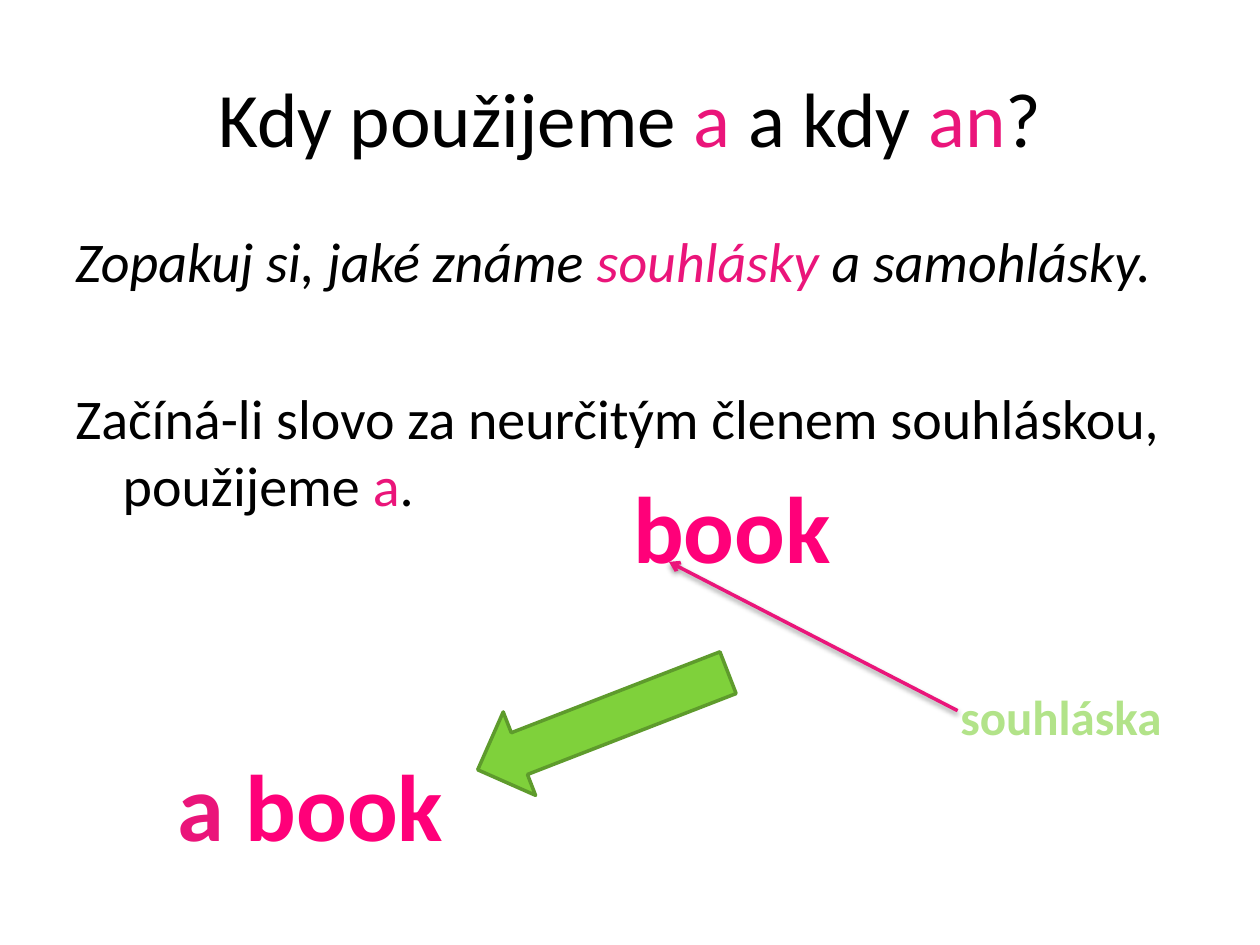
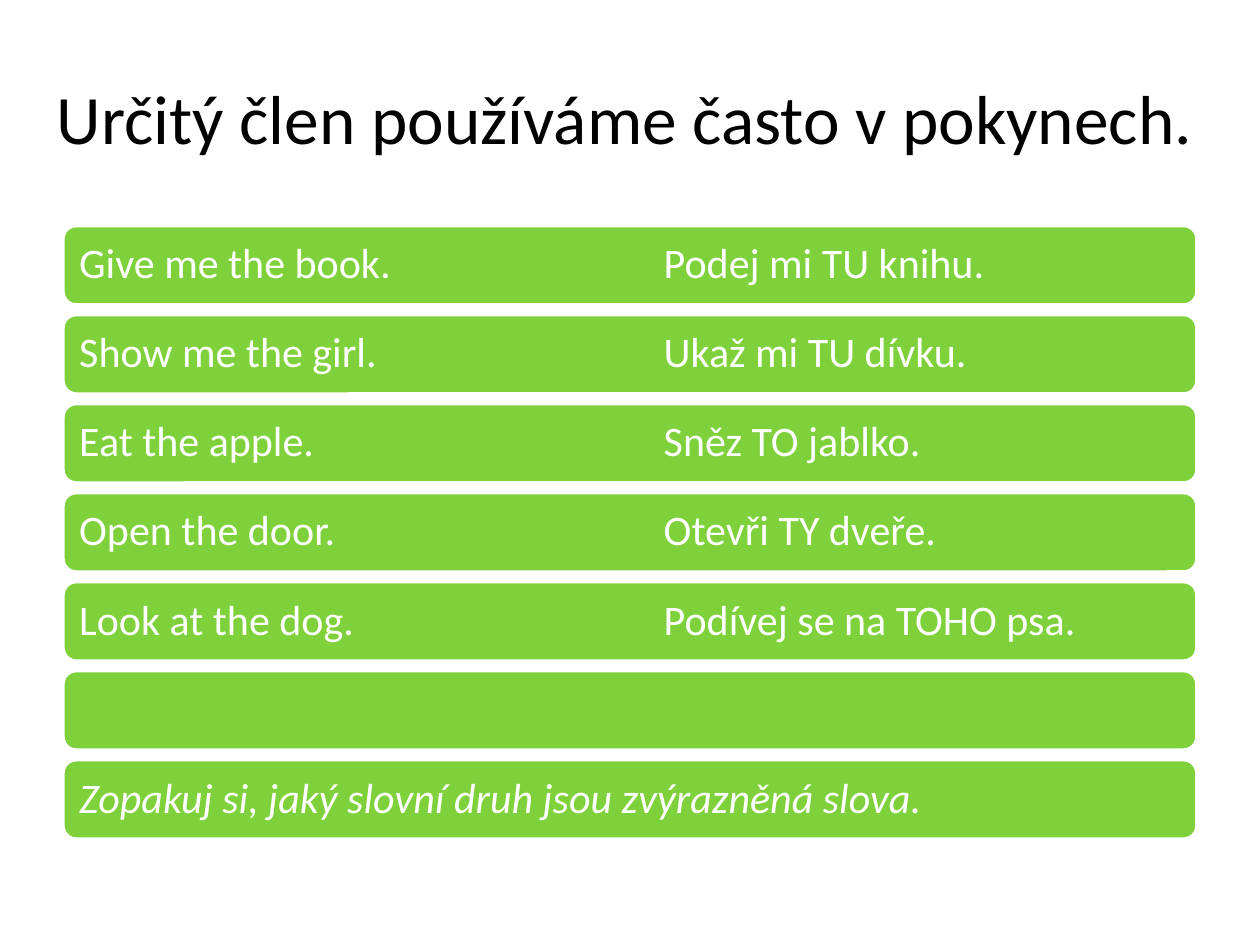
"""Builds two slides on English articles for Czech pupils."""
from dataclasses import dataclass

from lxml import etree
from pptx import Presentation
from pptx.dml.color import RGBColor
from pptx.enum import shapes, text
from pptx.oxml import ns
from pptx.util import Pt


@dataclass(frozen=True)
class Theme:
    font: str = "Calibri"
    ink: str = "000000"
    white: str = "FFFFFF"
    pink: str = "EA157A"
    hot_pink: str = "FF0079"
    green: str = "7FD13B"
    dark_green: str = "5E9B2C"
    pale_green: str = "B2E389"
    title: float = 44
    long_title: float = 39.6
    word: float = 54
    body: float = 32
    label: float = 28
    row: float = 24
    line: float = 2


T = Theme()

ARTICLE_TITLE = ["Kdy použijeme ", ("a ", T.pink), "a kdy ", ("an", T.pink), "?"]
REVIEW = ["Zopakuj si, jaké známe ", ("souhlásky", T.pink), " a samohlásky."]
RULE = ["Začíná-li slovo za neurčitým členem souhláskou, použijeme ", ("a", T.pink), "."]
WORDS = [
    ((354.2, 264.2, 128.2, 72.7), [("book", T.hot_pink)], T.word, False),
    ((518.4, 388.8, 175.7, 41), [("souhláska", T.pale_green)], T.label, True),
    ((93.6, 423.4, 167.8, 72.7), [("a ", T.pink), ("book", T.hot_pink)], T.word, False),
]
POINTER = (547.2, 406.1, 382.3, 321.1)
ARROW = (267.8, 386.6, 153.4, 51.1)

COMMAND_TITLE = ["Určitý člen používáme často v pokynech."]
COMMANDS = [
    ("Give me the book.", "Podej mi TU knihu."),
    ("Show me the girl.", "Ukaž mi TU dívku."),
    ("Eat the apple.", "Sněz TO jablko."),
    ("Open the door.", "Otevři TY dveře."),
    ("Look at the dog.", "Podívej se na TOHO psa."),
    (),
    ("Zopakuj si, jaký slovní druh jsou zvýrazněná slova.",),
]
ROW_LEFT, ROW_TOP, ROW_W, ROW_H, ROW_PITCH = 36, 128.9, 648, 45.4, 50.87
TRANSLATION_TAB = 334


def rgb(value):
    """Turns a hex string into a colour."""
    return RGBColor.from_string(value)


def pts(*values):
    """Turns numbers into point lengths."""
    return [Pt(v) for v in values]


def add_xml(parent, tag, **attrs):
    """Appends a DrawingML element and returns it."""
    return etree.SubElement(parent, ns.qn(tag), {k: str(v) for k, v in attrs.items()})


def write(p, parts, size, color=T.ink, bold=False, italic=False, align=None,
          before=None, spacing=None, hang=0, tab=None):
    """Fills a paragraph with runs; a part is text or a (text, colour) pair."""
    pPr = p._p.get_or_add_pPr()
    if hang:
        pPr.set("marL", str(Pt(hang)))
        pPr.set("indent", str(-Pt(hang)))
    if align is not None:
        p.alignment = align
    if before is not None:
        p.space_before = Pt(before)
    if spacing:
        p.line_spacing = spacing
    if tab:
        add_xml(add_xml(pPr, "a:tabLst"), "a:tab", pos=Pt(tab), algn="l")
    for part in parts:
        words, tint = (part, color) if isinstance(part, str) else part
        r = p.add_run()
        r.text = words
        f = r.font
        f.name, f.size, f.bold, f.italic = T.font, Pt(size), bold, italic
        f.color.rgb = rgb(tint)


def add_slide(prs, title, box, size, align):
    """Adds a title-only slide with its title placed and formatted."""
    s = prs.slides.add_slide(prs.slide_layouts[5])
    sp = s.shapes.title
    sp.left, sp.top, sp.width, sp.height = pts(*box)
    tf = sp.text_frame
    tf.auto_size = text.MSO_AUTO_SIZE.NONE
    tf.vertical_anchor = text.MSO_ANCHOR.MIDDLE
    write(tf.paragraphs[0], title, size, align=align)
    return s


def add_box(s, box, wrap=True):
    """Adds a text box and returns its text frame."""
    tf = s.shapes.add_textbox(*pts(*box)).text_frame
    tf.word_wrap = wrap
    return tf


def add_shape(s, kind, box, line):
    """Adds a green preset shape with the given outline."""
    sp = s.shapes.add_shape(kind, *pts(*box))
    sp.shadow.inherit = False
    sp.fill.solid()
    sp.fill.fore_color.rgb = rgb(T.green)
    sp.line.color.rgb = rgb(line)
    sp.line.width = Pt(T.line)
    return sp


def add_pointer(s, ends):
    """Adds a pink arrow with a soft shadow."""
    c = s.shapes.add_connector(shapes.MSO_CONNECTOR.STRAIGHT, *pts(*ends))
    c.line.color.rgb = rgb(T.pink)
    c.line.width = Pt(T.line)
    add_xml(c.line._get_or_add_ln(), "a:tailEnd", type="arrow")
    effects = add_xml(c._element.spPr, "a:effectLst")
    shadow = add_xml(effects, "a:outerShdw", blurRad=Pt(3.1), dist=Pt(1.6),
                     dir=5400000, rotWithShape=0)
    add_xml(add_xml(shadow, "a:srgbClr", val=T.ink), "a:alpha", val=38000)


def article_slide(prs):
    """Builds the slide on choosing between a and an."""
    s = add_slide(prs, ARTICLE_TITLE, (36, 21.6, 648, 90), T.title, text.PP_ALIGN.CENTER)
    tf = add_box(s, (36, 126, 648, 189.4))
    write(tf.paragraphs[0], REVIEW, T.body, italic=True, hang=27)
    write(tf.add_paragraph(), RULE, T.body, before=51.2, hang=27)
    add_pointer(s, POINTER)
    add_shape(s, shapes.MSO_SHAPE.LEFT_ARROW, ARROW, T.dark_green).rotation = 338.8
    for box, parts, size, wrap in WORDS:
        p = add_box(s, box, wrap).paragraphs[0]
        write(p, parts, size, bold=True, align=text.PP_ALIGN.CENTER)


def command_slide(prs):
    """Builds the slide of commands with their translations."""
    s = add_slide(prs, COMMAND_TITLE, (25.2, 21.6, 680.4, 90), T.long_title,
                  text.PP_ALIGN.LEFT)
    for i, row in enumerate(COMMANDS):
        box = (ROW_LEFT, ROW_TOP + i * ROW_PITCH, ROW_W, ROW_H)
        sp = add_shape(s, shapes.MSO_SHAPE.ROUNDED_RECTANGLE, box, T.white)
        if row:
            tf = sp.text_frame
            tf.vertical_anchor = text.MSO_ANCHOR.MIDDLE
            write(tf.paragraphs[0], ["\t".join(row)], T.row, T.white,
                  italic=len(row) == 1, align=text.PP_ALIGN.LEFT, spacing=0.9,
                  tab=TRANSLATION_TAB)


def main():
    """Builds and saves the deck."""
    prs = Presentation()
    prs.slide_width, prs.slide_height = pts(720, 540)
    article_slide(prs)
    command_slide(prs)
    prs.save("out.pptx")


if __name__ == "__main__":
    main()
